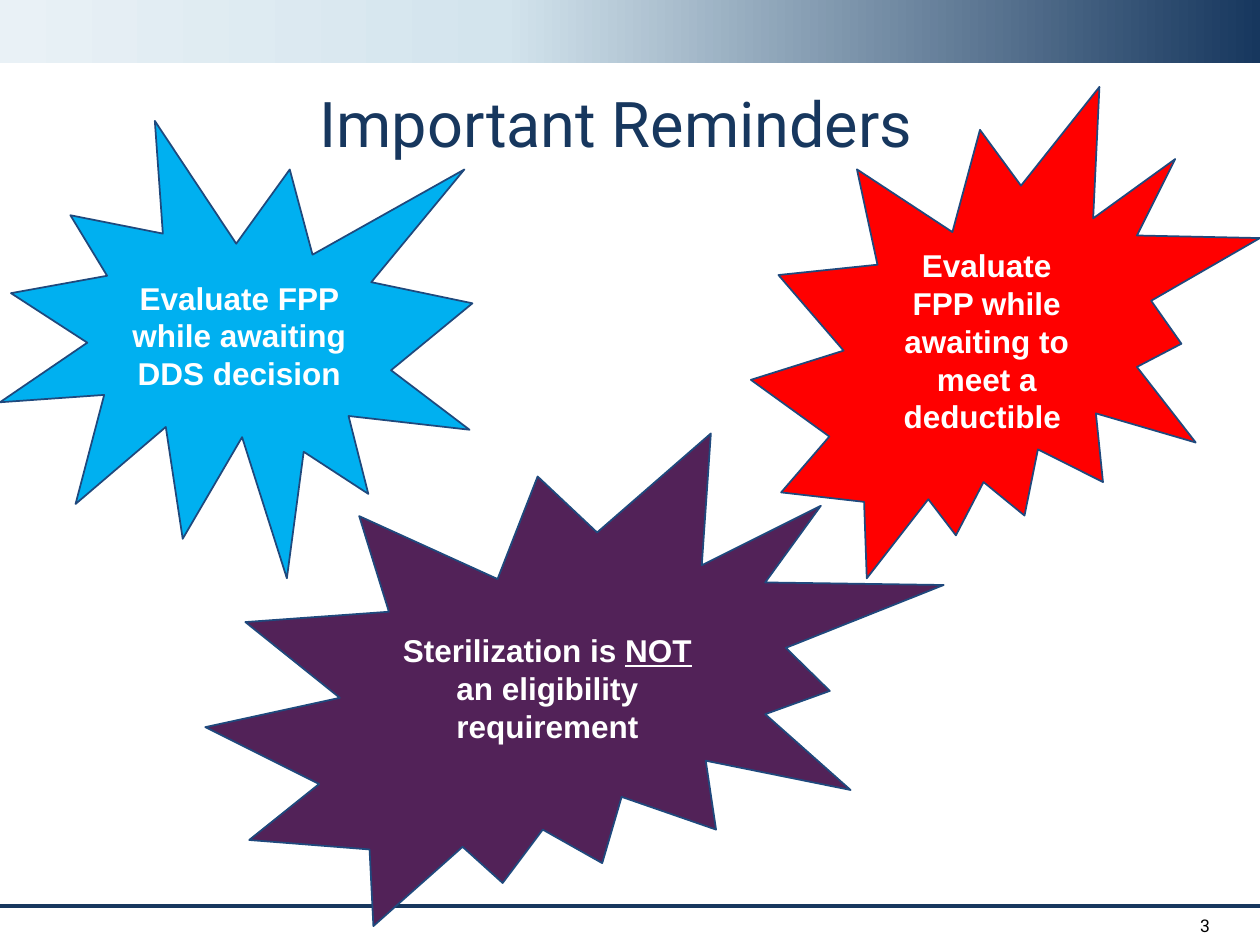
from copy import deepcopy

from pptx import Presentation
from pptx.dml.color import RGBColor
from pptx.enum import shapes, text
from pptx.oxml.ns import qn
from pptx.util import Inches, Pt

COLORS = {
    "navy": "17375E", "mist": "D3E4ED", "pale": "E9F1F6", "outline": "1F497D",
    "blue": "00B0F0", "red": "FF0000", "purple": "522258",
    "white": "FFFFFF", "black": "000000",
}
SEAL = shapes.MSO_SHAPE


def color(name):
    return RGBColor.from_string(COLORS[name])


def set_font(font, name, size, color_name, bold=False):
    font.name, font.size, font.bold = name, Pt(size), bold
    font.color.rgb = color(color_name)


def add_banner(slide, left, top, width, height):
    banner = slide.shapes.add_shape(
        SEAL.RECTANGLE, Inches(left), Inches(top), Inches(width), Inches(height))
    banner.shadow.inherit = False
    banner.line.fill.background()
    banner.fill.gradient()
    banner.fill.gradient_angle = 180
    stop_list = banner._element.spPr.find(qn("a:gradFill")).find(qn("a:gsLst"))
    stop_list.append(deepcopy(stop_list[0]))
    stops = [(0, "navy"), (0.6, "mist"), (1, "pale")]
    for stop, (position, name) in zip(banner.fill.gradient_stops, stops):
        stop.position = position
        stop.color.rgb = color(name)


def add_footer(slide, left, top, width, height, number):
    """Draw the rule along the top of the box and the page number at its right."""
    rule = slide.shapes.add_connector(
        shapes.MSO_CONNECTOR.STRAIGHT,
        Inches(left), Inches(top), Inches(left + width), Inches(top))
    rule.line.color.rgb = color("navy")
    rule.line.width = Pt(2.25)
    properties = rule._element.spPr
    properties.append(properties.makeelement(qn("a:effectLst"), {}))

    number_width, right_margin = 0.62, 0.3
    box = slide.shapes.add_textbox(
        Inches(left + width - right_margin - number_width), Inches(top),
        Inches(number_width), Inches(height))
    frame = box.text_frame
    frame.word_wrap = True
    frame.vertical_anchor = text.MSO_ANCHOR.MIDDLE
    frame.text = number
    paragraph = frame.paragraphs[0]
    paragraph.alignment = text.PP_ALIGN.RIGHT
    set_font(paragraph.font, "Roboto", 10, "black")


def place_title(slide, left, top, width, height, wording):
    title = slide.shapes.title
    title.left, title.top = Inches(left), Inches(top)
    title.width, title.height = Inches(width), Inches(height)
    frame = title.text_frame
    frame.text = wording
    frame.word_wrap = True
    frame.auto_size = text.MSO_AUTO_SIZE.NONE
    frame.vertical_anchor = text.MSO_ANCHOR.TOP
    paragraph = frame.paragraphs[0]
    paragraph.alignment = text.PP_ALIGN.CENTER
    paragraph.line_spacing = 0.9
    set_font(paragraph.font, "Roboto", 36, "navy")


def add_burst(slide, left, top, width, height, seal, fill, runs, flipped=False):
    """Add a starburst; runs are (wording, underlined) pairs."""
    burst = slide.shapes.add_shape(
        seal, Inches(left), Inches(top), Inches(width), Inches(height))
    burst.shadow.inherit = False
    burst.fill.solid()
    burst.fill.fore_color.rgb = color(fill)
    burst.line.color.rgb = color("outline")
    burst.line.width = Pt(1)
    if flipped:
        burst._element.spPr.xfrm.set("flipH", "1")
    frame = burst.text_frame
    frame.word_wrap = True
    frame.vertical_anchor = text.MSO_ANCHOR.MIDDLE
    paragraph = frame.paragraphs[0]
    paragraph.alignment = text.PP_ALIGN.CENTER
    set_font(paragraph.font, "Arial", 18, "white", bold=True)
    for wording, underlined in runs:
        run = paragraph.add_run()
        run.text = wording
        if underlined:
            run.font.underline = True


def main():
    presentation = Presentation()
    presentation.slide_width, presentation.slide_height = Inches(10), Inches(7.5)
    slide = presentation.slides.add_slide(presentation.slide_layouts[5])

    add_banner(slide, 0, 0, 10, 0.5)
    add_footer(slide, 0, 7.19, 10, 0.31, "3")
    place_title(slide, 0.39, 0.69, 9, 0.9, "Important Reminders")
    add_burst(slide, 0, 0.96, 3.75, 3.63, SEAL.EXPLOSION1, "blue",
              [("Evaluate FPP while awaiting DDS decision", False)], flipped=True)
    add_burst(slide, 5.96, 0.69, 4.04, 3.9, SEAL.EXPLOSION2, "red",
              [("Evaluate FPP while awaiting to meet a deductible ", False)])
    add_burst(slide, 1.63, 3.44, 5.86, 3.91, SEAL.EXPLOSION2, "purple",
              [("Sterilization is ", False), ("NOT", True),
               (" an eligibility requirement", False)])
    presentation.save("out.pptx")


if __name__ == "__main__":
    main()
